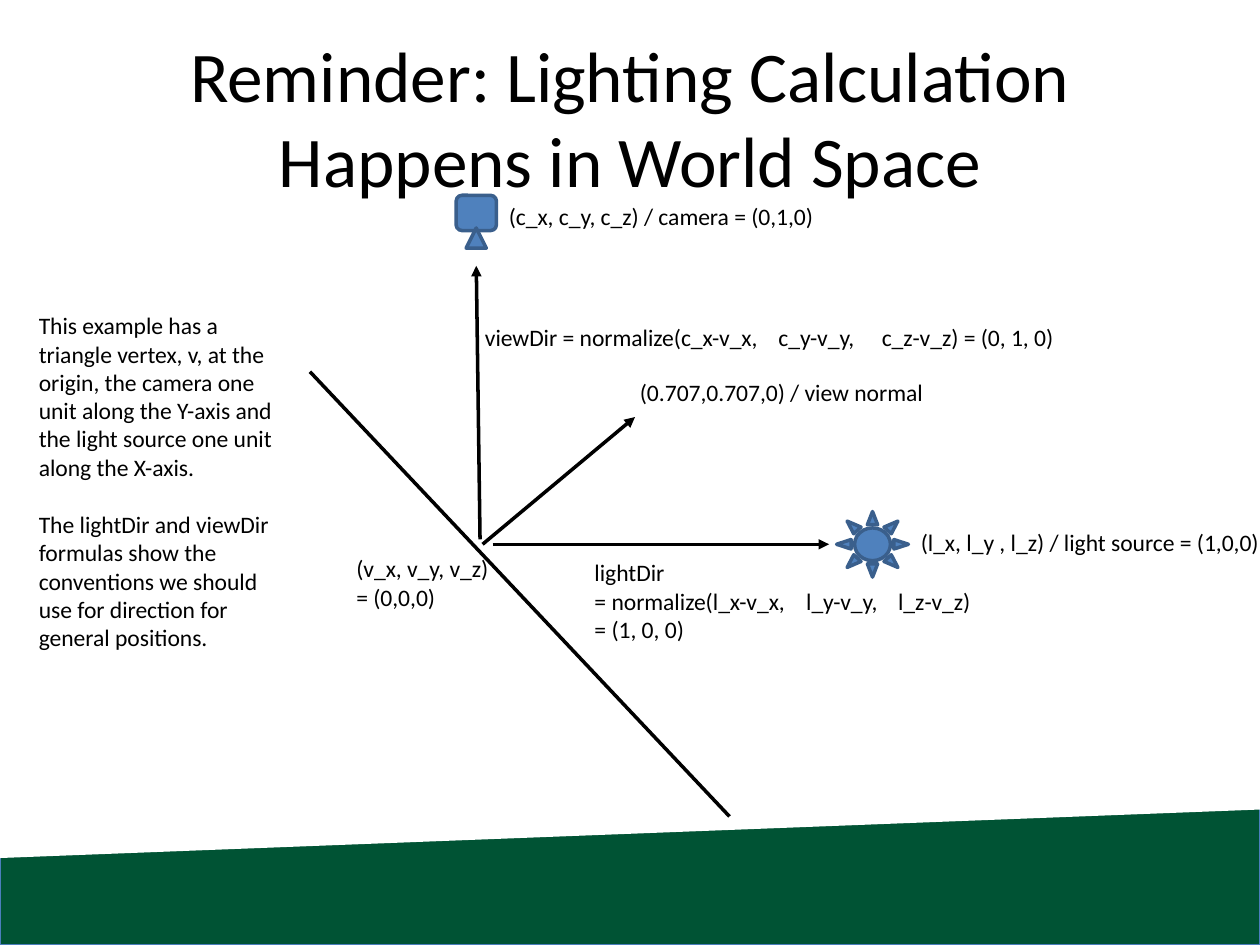
"""Build the slide on lighting calculation in world space."""
from pptx import Presentation
from pptx.dml.color import RGBColor
from pptx.enum.shapes import MSO_CONNECTOR, MSO_SHAPE
from pptx.enum.text import MSO_ANCHOR, MSO_AUTO_SIZE, PP_ALIGN
from pptx.oxml.ns import qn
from pptx.util import Inches, Pt
from lxml.etree import SubElement

BLACK = RGBColor(0x00, 0x00, 0x00)
WHITE = RGBColor(0xFF, 0xFF, 0xFF)
GREEN = RGBColor(0x00, 0x53, 0x34)
EDGE_BLUE = RGBColor(0x4B, 0x7E, 0xBC)
BLUE = RGBColor(0x4F, 0x81, 0xBD)
DARK_BLUE = RGBColor(0x3A, 0x5F, 0x8C)
FONT = "Calibri"
BODY_SIZE = 13.5
LINE_WIDTH = 2

TITLE = "Reminder: Lighting Calculation Happens in World Space"
EXPLANATION = [
    "This example has a triangle vertex, v, at the origin, the camera one unit "
    "along the Y-axis and the light source one unit along the X-axis.",
    "The lightDir and viewDir formulas show the conventions we should use for "
    "direction for general positions.",
]
LABELS = [
    ((2.73, 4.35, 1.27, 0.56), ["(v_x, v_y, v_z)", "= (0,0,0)"], ()),
    ((3.94, 1.55, 2.66, 0.33), ["(c_x, c_y, c_z) / camera = (0,1,0)"], ()),
    ((7.21, 4.14, 2.93, 0.33), ["(l_x, l_y , l_z) / light source = (1,0,0)"], ()),
    ((4.98, 2.95, 2.49, 0.33), ["(0.707,0.707,0) / view normal"], ()),
    ((3.75, 2.51, 4.78, 0.33),
     ["viewDir = normalize(c_x-v_x,\tc_y-v_y,\tc_z-v_z) = (0, 1, 0)"], (2.33, 3.15)),
    ((4.62, 4.38, 3.24, 0.78),
     ["lightDir", "= normalize(l_x-v_x,\tl_y-v_y,\tl_z-v_z)", "= (1, 0, 0)"], (1.68, 2.41)),
]
SURFACE = ((5.79, 6.48), (2.46, 2.95))
DIRECTIONS = [
    ((3.81, 4.28), (3.78, 2.11)),
    ((3.91, 4.32), (6.58, 4.32)),
    ((3.83, 4.32), (5.04, 3.31)),
]
ICONS = [
    (MSO_SHAPE.ROUNDED_RECTANGLE, (3.62, 1.55, 0.32, 0.28)),
    (MSO_SHAPE.ISOSCELES_TRIANGLE, (3.7, 1.81, 0.16, 0.16)),
    (MSO_SHAPE.SUN, (6.64, 4.06, 0.57, 0.52)),
]


def add_filled_shape(slide, kind, box, fill, line=None, width=LINE_WIDTH):
    shape = slide.shapes.add_shape(kind, *map(Inches, box))
    shape.shadow.inherit = False
    shape.fill.solid()
    shape.fill.fore_color.rgb = fill
    if line is None:
        shape.line.fill.background()
    else:
        shape.line.color.rgb = line
        shape.line.width = Pt(width)
    return shape


def add_ground(slide):
    add_filled_shape(slide, MSO_SHAPE.RECTANGLE, (0, 5.61, 10, 1.89), GREEN, EDGE_BLUE, 0.75)
    slope = add_filled_shape(slide, MSO_SHAPE.PARALLELOGRAM, (3.84, 0.65, 2.32, 10), WHITE)
    slope.adjustments[0] = 0.166
    slope.rotation = 90
    slope._element.spPr.get_or_add_xfrm().set("flipH", "1")


def add_line(slide, start, end, arrow=False):
    connector = slide.shapes.add_connector(
        MSO_CONNECTOR.STRAIGHT, *map(Inches, start + end))
    connector.line.color.rgb = BLACK
    connector.line.width = Pt(LINE_WIDTH)
    if arrow:
        SubElement(connector.line._get_or_add_ln(), qn("a:tailEnd"), type="triangle")
    SubElement(connector._element.spPr, qn("a:effectLst"))


def format_runs(paragraph, size):
    for run in paragraph.runs:
        run.font.name = FONT
        run.font.size = Pt(size)
        run.font.color.rgb = BLACK


def add_text(slide, box, lines, tabs=(), wrap=False, gap=0):
    text_frame = slide.shapes.add_textbox(*map(Inches, box)).text_frame
    text_frame.word_wrap = wrap
    text_frame.auto_size = MSO_AUTO_SIZE.SHAPE_TO_FIT_TEXT
    text_frame.text = "\n".join(lines)
    for index, paragraph in enumerate(text_frame.paragraphs):
        if gap and index:
            paragraph.space_before = Pt(gap)
        if tabs and "\t" in lines[index]:
            tab_list = SubElement(paragraph._p.get_or_add_pPr(), qn("a:tabLst"))
            for position in tabs:
                SubElement(tab_list, qn("a:tab"), pos=str(Inches(position)), algn="l")
        format_runs(paragraph, BODY_SIZE)


def set_title(slide):
    title = slide.shapes.title
    title.left, title.top, title.width, title.height = map(Inches, (0.5, 0.3, 9, 1.25))
    text_frame = title.text_frame
    text_frame.text = TITLE
    text_frame.word_wrap = True
    text_frame.auto_size = MSO_AUTO_SIZE.NONE
    text_frame.vertical_anchor = MSO_ANCHOR.MIDDLE
    text_frame.paragraphs[0].alignment = PP_ALIGN.CENTER
    format_runs(text_frame.paragraphs[0], 40.7)


def main():
    presentation = Presentation()
    presentation.slide_width, presentation.slide_height = Inches(10), Inches(7.5)
    slide = presentation.slides.add_slide(presentation.slide_layouts[5])
    set_title(slide)
    add_ground(slide)
    add_line(slide, *SURFACE)
    for start, end in DIRECTIONS:
        add_line(slide, start, end, arrow=True)
    for kind, box in ICONS:
        add_filled_shape(slide, kind, box, BLUE, DARK_BLUE)
    for box, lines, tabs in LABELS:
        add_text(slide, box, lines, tabs)
    add_text(slide, (0.21, 2.42, 2.07, 2.83), EXPLANATION, wrap=True, gap=16.5)
    presentation.save("out.pptx")


if __name__ == "__main__":
    main()
